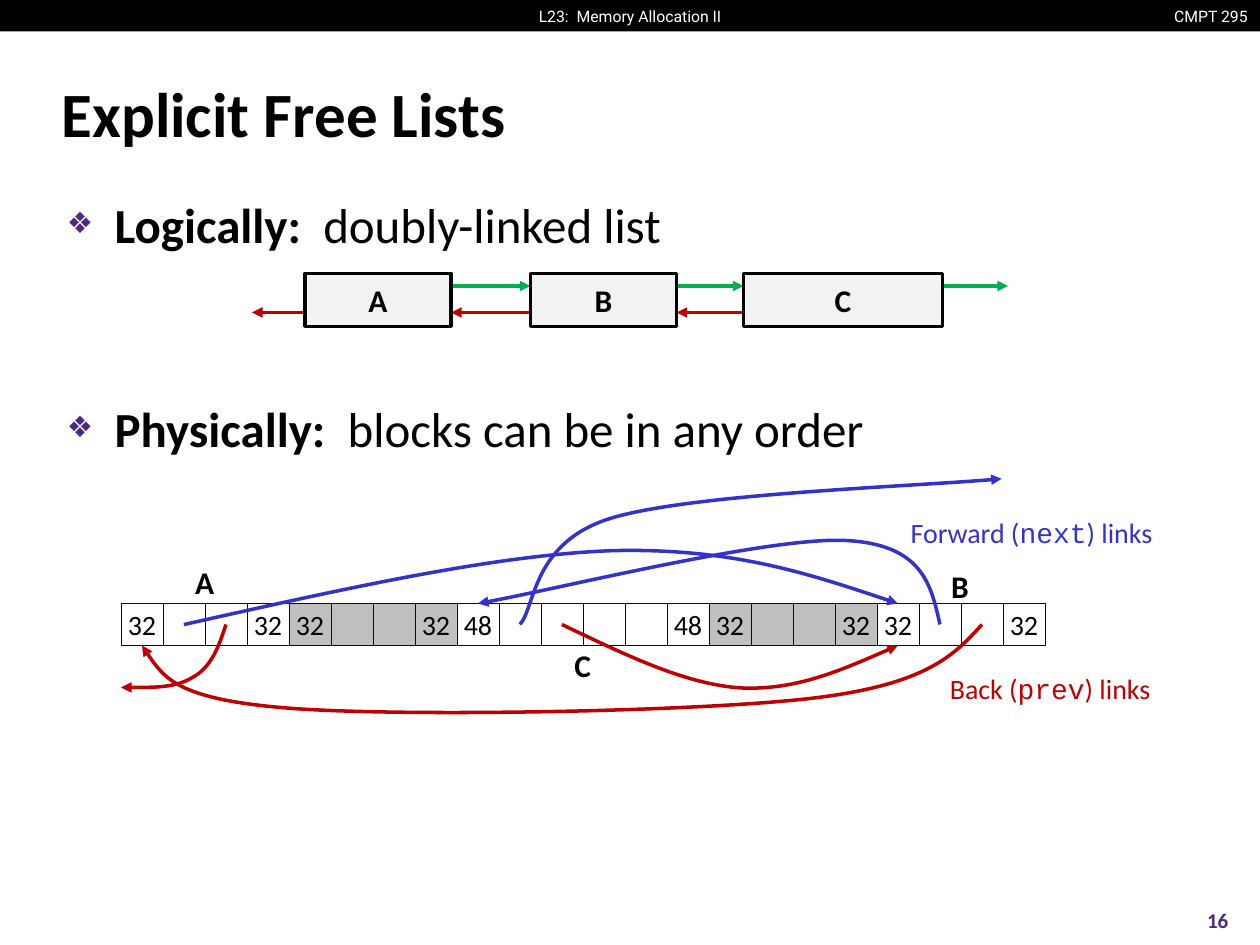
from itertools import pairwise
from typing import NamedTuple

from lxml import etree
from pptx import Presentation
from pptx.dml.color import RGBColor
from pptx.enum.shapes import MSO_CONNECTOR, MSO_SHAPE
from pptx.enum.text import MSO_ANCHOR, MSO_AUTO_SIZE, PP_ALIGN
from pptx.oxml import parse_xml
from pptx.oxml.ns import nsdecls, qn
from pptx.util import Inches, Pt

LEFT, CENTER, RIGHT = PP_ALIGN.LEFT, PP_ALIGN.CENTER, PP_ALIGN.RIGHT
MIDDLE, TOP = MSO_ANCHOR.MIDDLE, MSO_ANCHOR.TOP
RECT, STRAIGHT = MSO_SHAPE.RECTANGLE, MSO_CONNECTOR.STRAIGHT
NO_FIT = MSO_AUTO_SIZE.NONE

COLORS = {
    "black": "000000", "white": "FFFFFF", "purple": "4B2A85",
    "node": "F2F2F2", "used": "C0C0C0", "cell line": "000066",
    "green": "00B050", "red": "C00000", "blue": "3333CC",
}
ARROW_WIDTH = 2
CELL = 1 / 3
MEMORY_LEFT, MEMORY_TOP = 0.96, 4.79
NODE_TOP, NODE_HEIGHT = 2.17, 0.42
NEXT_Y, PREV_Y = NODE_TOP + 0.1, NODE_TOP + 0.31
LIST_START, LIST_END = 2, 8


class Run(NamedTuple):
    text: str
    size: float
    color: str = "black"
    bold: bool = False
    font: str = "Calibri"


class Label(NamedTuple):
    box: tuple
    runs: list
    align: PP_ALIGN = LEFT
    anchor: MSO_ANCHOR = TOP
    wrap: bool = False


class Node(NamedTuple):
    name: str
    left: float
    width: float


class Block(NamedTuple):
    cells: int
    size: str
    fill: str


class Link(NamedTuple):
    """A chain of cubic curves; points are (column, row) in memory cells."""
    color: str
    points: list


HEADER = [
    Label((9.19, 0, 0.81, 0.25), [Run("CMPT 295", 9, "white", font="Roboto")], RIGHT, MIDDLE),
    Label((4.17, 0, 1.66, 0.25),
          [Run("L23:  Memory Allocation II", 9, "white", font="Roboto")], CENTER, MIDDLE),
]
PAGE_NUMBER = Label((9.33, 7.1, 0.67, 0.4), [Run("16", 12, "purple", True)],
                    CENTER, MIDDLE, True)
BULLETS = [
    (5, [Run("Logically:  ", 28, bold=True), Run("doubly-linked list", 28)]),
    (83, [Run("Physically:  ", 28, bold=True), Run("blocks can be in any order", 28)]),
]
NODES = [Node("A", 2.42, 1.16), Node("B", 4.21, 1.16), Node("C", 5.9, 1.58)]
BLOCKS = [Block(4, "32", "white"), Block(4, "32", "used"), Block(6, "48", "white"),
          Block(4, "32", "used"), Block(4, "32", "white")]
LINKS = [
    Link("blue", [(1.5, 0.5), (5.22, -0.33), (8.91, -1.17), (11.76, -1.26),
                  (14.58, -1.32), (16.53, -0.66), (18.5, 0)]),
    Link("blue", [(19.5, 0.5), (19.29, -0.45), (19.08, -1.41), (17.25, -1.5),
                  (15.42, -1.59), (9.96, -0.24), (8.5, 0)]),
    Link("red", [(20.5, 0.5), (19.86, 1.2), (19.23, 1.92), (16.5, 2.25),
                 (13.74, 2.58), (6.66, 2.7), (3.99, 2.49),
                 (1.32, 2.28), (0.93, 1.65), (0.5, 1)]),
    Link("red", [(10.5, 0.5), (11.97, 1.2), (13.41, 1.92), (14.76, 2.01),
                 (16.08, 2.07), (17.28, 1.53), (18.5, 1)]),
    Link("blue", [(9.5, 0.5), (9.87, 0.09), (9.78, -1.47), (11.7, -2.04),
                  (13.62, -2.61), (19.05, -2.79), (20.97, -2.97)]),
    Link("red", [(2.5, 0.5), (2.34, 1), (2.16, 1.5), (1.74, 1.74),
                 (1.32, 2.01), (0.66, 2), (0, 2)]),
]
MEMORY_LABELS = [
    Label((7.13, 4.04, 2.14, 0.37), [Run("Forward (", 16, "blue"),
          Run("next", 16, "blue", font="Courier New"), Run(") links", 16, "blue")]),
    Label((7.44, 5.28, 1.81, 0.37), [Run("Back (", 16, "red"),
          Run("prev", 16, "red", font="Courier New"), Run(") links", 16, "red")]),
    Label((1.45, 4.42, 0.35, 0.41), [Run("A", 18, bold=True)]),
    Label((7.45, 4.45, 0.34, 0.41), [Run("B", 18, bold=True)]),
    Label((4.46, 5.08, 0.33, 0.41), [Run("C", 18, bold=True)]),
]


def rgb(name: str) -> RGBColor:
    return RGBColor.from_string(COLORS[name])


def inches(values) -> list:
    return [Inches(v) for v in values]


def add_runs(p, runs: list) -> None:
    for run in runs:
        r = p.add_run()
        r.text = run.text
        r.font.color.rgb = rgb(run.color)
        style = {"name": run.font, "size": Pt(run.size), "bold": run.bold}
        for key, value in style.items():
            setattr(r.font, key, value)


def write(sp, runs: list, align=CENTER, anchor=MIDDLE, wrap=False) -> None:
    tf = sp.text_frame
    style = {"word_wrap": wrap, "vertical_anchor": anchor, "auto_size": NO_FIT}
    for key, value in style.items():
        setattr(tf, key, value)
    tf.paragraphs[0].alignment = align
    add_runs(tf.paragraphs[0], runs)


def add_label(shapes, label: Label) -> None:
    write(shapes.add_textbox(*inches(label.box)), *label[1:])


def add_box(shapes, box: tuple, fill: str, line: str = "", width: float = 0):
    sp = shapes.add_shape(RECT, *inches(box))
    sp.shadow.inherit = False
    sp.fill.solid()
    sp.fill.fore_color.rgb = rgb(fill)
    if line:
        sp.line.color.rgb = rgb(line)
        sp.line.width = Pt(width)
    else:
        sp.line.fill.background()
    return sp


def style_arrow(sp, color: str) -> None:
    sp.line.color.rgb = rgb(color)
    sp.line.width = Pt(ARROW_WIDTH)
    etree.SubElement(sp.line._get_or_add_ln(), qn("a:tailEnd"), type="triangle")


def add_arrow(shapes, x1: float, x2: float, y: float, color: str) -> None:
    sp = shapes.add_connector(STRAIGHT, *inches((x1, y, x2, y)))
    style_arrow(sp, color)
    etree.SubElement(sp._element.spPr, qn("a:effectLst"))


def add_link(shapes, link: Link) -> None:
    """Lay the points out as a polyline, then turn each three segments into a curve."""
    start, *rest = [inches((MEMORY_LEFT + col * CELL, MEMORY_TOP + row * CELL))
                    for col, row in link.points]
    builder = shapes.build_freeform(*start)
    builder.add_line_segments(rest, close=False)
    sp = builder.convert_to_shape()
    sp.shadow.inherit = False
    sp.fill.background()
    style_arrow(sp, link.color)
    outline = sp._element.find(".//" + qn("a:path"))
    segments = outline.findall(qn("a:lnTo"))
    for i in range(0, len(segments), 3):
        curve = etree.SubElement(outline, qn("a:cubicBezTo"))
        for segment in segments[i:i + 3]:
            curve.append(segment[0])
            outline.remove(segment)


def fill_placeholders(slide) -> None:
    title, body = slide.placeholders
    for sp, box in ((title, (0.39, 0.48, 9.19, 0.83)), (body, (0.43, 1.49, 9.15, 2.4))):
        sp.left, sp.top, sp.width, sp.height = inches(box)
    write(title, [Run("Explicit Free Lists", 36, bold=True)], LEFT, MIDDLE, True)
    tf = body.text_frame
    tf.auto_size = NO_FIT
    for i, (gap, runs) in enumerate(BULLETS):
        p = tf.add_paragraph() if i else tf.paragraphs[0]
        p.space_before = Pt(gap)
        add_runs(p, runs)
        pPr = p._p.get_or_add_pPr()
        pPr.set("marL", str(Inches(0.38)))
        pPr.set("indent", str(-Inches(0.38)))
        for xml in (f'<a:buClr {nsdecls("a")}><a:srgbClr val="{COLORS["purple"]}"/></a:buClr>',
                    f'<a:buSzPct {nsdecls("a")} val="60000"/>',
                    f'<a:buChar {nsdecls("a")} char="❖"/>'):
            pPr.append(parse_xml(xml))


def draw_list(shapes) -> None:
    stops = [LIST_START, *(x for n in NODES for x in (n.left, n.left + n.width)), LIST_END]
    gaps = list(pairwise(stops))[::2]
    for left, right in gaps[1:]:
        add_arrow(shapes, left, right, NEXT_Y, "green")
    for left, right in gaps[:-1]:
        add_arrow(shapes, right, left, PREV_Y, "red")
    for node in NODES:
        sp = add_box(shapes, (node.left, NODE_TOP, node.width, NODE_HEIGHT),
                     "node", "black", 2)
        write(sp, [Run(node.name, 18, bold=True)])


def draw_memory(shapes) -> None:
    cells = [(block, i in (0, block.cells - 1)) for block in BLOCKS for i in range(block.cells)]
    for col, (block, is_tag) in enumerate(cells):
        sp = add_box(shapes, (MEMORY_LEFT + col * CELL, MEMORY_TOP, CELL, CELL),
                     block.fill, "cell line", 0.25)
        if is_tag:
            write(sp, [Run(block.size, 16)])
    for link in LINKS:
        add_link(shapes, link)
    for label in MEMORY_LABELS:
        add_label(shapes, label)


def main() -> None:
    prs = Presentation()
    prs.slide_width, prs.slide_height = Inches(10), Inches(7.5)
    slide = prs.slides.add_slide(prs.slide_layouts[1])
    shapes = slide.shapes
    fill_placeholders(slide)
    add_box(shapes, (0, 0, 10, 0.25), "black")
    for label in (*HEADER, PAGE_NUMBER):
        add_label(shapes, label)
    draw_list(shapes.add_group_shape().shapes)
    draw_memory(shapes.add_group_shape().shapes)
    prs.save("out.pptx")


if __name__ == "__main__":
    main()
